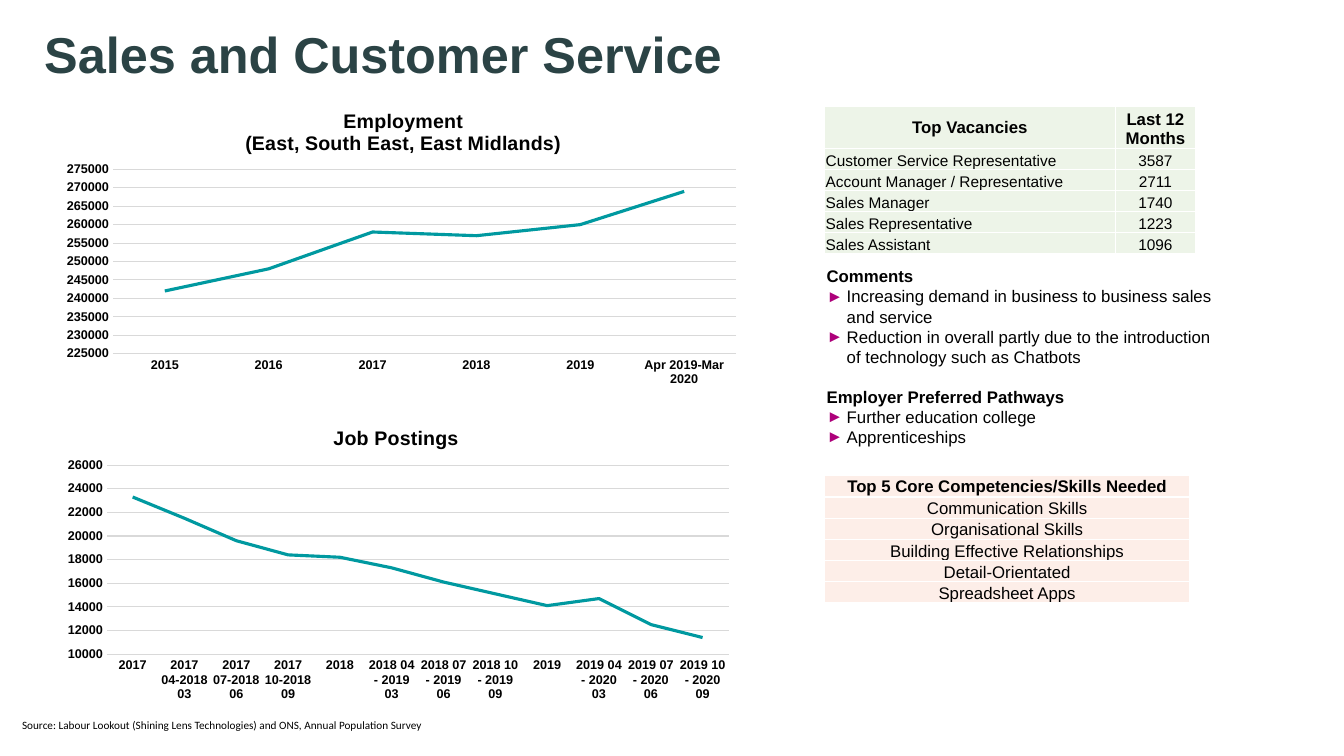
from lxml.etree import SubElement
from pptx import Presentation
from pptx.chart.data import CategoryChartData
from pptx.dml.color import RGBColor
from pptx.enum.chart import XL_CHART_TYPE, XL_TICK_MARK
from pptx.enum.text import MSO_ANCHOR, PP_ALIGN
from pptx.oxml import parse_xml
from pptx.oxml.ns import nsdecls, qn
from pptx.util import Inches, Pt

COLORS = {
    "heading": "2B4345",
    "text": "000000",
    "trend": "0099A0",
    "grid": "D9D9D9",
    "bullet": "AD007A",
    "vacancies": "EDF4E8",
    "skills": "FDEEE8",
    "border": "FFFFFF",
}


def style(font, size, bold=False, color="text", name="Arial"):
    for attribute, value in {"name": name, "size": Pt(size), "bold": bold}.items():
        setattr(font, attribute, value)
    font.color.rgb = RGBColor.from_string(COLORS[color])


def place(parent, position, x, y, width=None, height=None):
    """Insert a manual chart layout, given as fractions of the chart area."""
    extent = ""
    if width:
        extent = f'<c:w val="{width}"/><c:h val="{height}"/>'
    target = '<c:layoutTarget val="inner"/>' if width else ""
    for existing in parent.findall(qn("c:layout")):
        parent.remove(existing)
    parent.insert(position, parse_xml(
        f'<c:layout {nsdecls("c")}><c:manualLayout>{target}'
        '<c:xMode val="edge"/><c:yMode val="edge"/>'
        f'<c:x val="{x}"/><c:y val="{y}"/>{extent}</c:manualLayout></c:layout>'))


prs = Presentation()
prs.slide_width, prs.slide_height = Inches(13.33), Inches(7.5)
slide = prs.slides.add_slide(prs.slide_layouts[6])

# Heading and source line
labels = [
    ("Sales and Customer Service", (0.34, 0, 12.66, 1.05), MSO_ANCHOR.MIDDLE,
     {"size": 36, "bold": True, "color": "heading"}),
    ("Source: Labour Lookout (Shining Lens Technologies) and ONS, Annual Population Survey",
     (0.12, 7.08, 5.45, 0.37), MSO_ANCHOR.TOP, {"size": 8, "name": "Calibri"}),
]
for wording, box, anchor, font_values in labels:
    frame = slide.shapes.add_textbox(*map(Inches, box)).text_frame
    frame.word_wrap = True
    frame.vertical_anchor = anchor
    frame.text = wording
    style(frame.paragraphs[0].runs[0].font, **font_values)

# Trend charts
trends = [
    {
        "title": "Employment\n(East, South East, East Midlands)",
        "box": (0.54, 0.9, 6.9, 3),
        "title_at": (0.27, 0.05),
        "plot": (0.084, 0.26, 0.896, 0.61),
        "scale": (225000, 275000, 5000),
        "points": {"2015": 242000, "2016": 248000, "2017": 258000, "2018": 257000,
                   "2019": 260000, "Apr 2019-Mar 2020": 269000},
    },
    {
        "title": "Job Postings",
        "box": (0.54, 4.03, 6.83, 3),
        "title_at": (0.4, 0.05),
        "plot": (0.076, 0.195, 0.903, 0.625),
        "scale": (10000, 26000, 2000),
        "points": {"2017": 23300, "2017 04-2018 03": 21500, "2017 07-2018 06": 19600,
                   "2017 10-2018 09": 18400, "2018": 18200, "2018 04 - 2019 03": 17300,
                   "2018 07 - 2019 06": 16100, "2018 10 - 2019 09": 15100, "2019": 14100,
                   "2019 04 - 2020 03": 14700, "2019 07 - 2020 06": 12500,
                   "2019 10 - 2020 09": 11400},
    },
]
for trend in trends:
    data = CategoryChartData(number_format="General")
    data.categories = list(trend["points"])
    data.add_series("Series 1", list(trend["points"].values()))
    chart = slide.shapes.add_chart(
        XL_CHART_TYPE.LINE, *map(Inches, trend["box"]), data).chart
    style(chart.font, 10, bold=True)
    chart.has_legend = False

    heading = chart.chart_title
    heading.text_frame.text = trend["title"]
    for paragraph in heading.text_frame.paragraphs:
        style(paragraph.runs[0].font, 14, bold=True)
    heading.include_in_layout = False
    place(heading._element, 1, *trend["title_at"])
    place(chart._chartSpace.chart.plotArea, 0, *trend["plot"])

    for axis in (chart.category_axis, chart.value_axis):
        axis.major_tick_mark = axis.minor_tick_mark = XL_TICK_MARK.NONE
        style(axis.tick_labels.font, 9, bold=True)
    values = chart.value_axis
    values.minimum_scale, values.maximum_scale, values.major_unit = trend["scale"]
    values.format.line.fill.background()
    for line in (chart.category_axis.format.line, values.major_gridlines.format.line):
        line.color.rgb = RGBColor.from_string(COLORS["grid"])
        line.width = Pt(0.75)

    plot = chart.plots[0]
    plot.vary_by_categories = False
    series = plot.series[0]
    series.smooth = False
    series.format.line.color.rgb = RGBColor.from_string(COLORS["trend"])
    series.format.line.width = Pt(2.25)

# Vacancy and skill tables
tables = [
    {
        "at": (8.18, 1.06), "columns": (2.88, 0.8), "header_height": 0.4,
        "fill": "vacancies", "size": 11, "alignments": (PP_ALIGN.LEFT, PP_ALIGN.CENTER),
        "rows": [("Top Vacancies", "Last 12 Months"),
                 ("Customer Service Representative", "3587"),
                 ("Account Manager / Representative", "2711"),
                 ("Sales Manager", "1740"),
                 ("Sales Representative", "1223"),
                 ("Sales Assistant", "1096")],
    },
    {
        "at": (8.18, 4.72), "columns": (3.62,), "header_height": 0.21,
        "fill": "skills", "size": 12, "alignments": (PP_ALIGN.CENTER,),
        "rows": [("Top 5 Core Competencies/Skills Needed",),
                 ("Communication Skills",),
                 ("Organisational Skills",),
                 ("Building Effective Relationships",),
                 ("Detail-Orientated",),
                 ("Spreadsheet Apps",)],
    },
]
ROW_HEIGHT = 0.21
for content in tables:
    rows, columns = content["rows"], content["columns"]
    height = content["header_height"] + ROW_HEIGHT * (len(rows) - 1)
    table = slide.shapes.add_table(
        len(rows), len(columns), *map(Inches, (*content["at"], sum(columns), height))).table
    for column, width in zip(table.columns, columns):
        column.width = Inches(width)
    for r, row in enumerate(rows):
        is_header = r == 0
        table.rows[r].height = Inches(content["header_height"] if is_header else ROW_HEIGHT)
        for c, wording in enumerate(row):
            cell = table.cell(r, c)
            cell.text = wording
            cell.margin_left = cell.margin_right = cell.margin_top = Inches(0.01)
            cell.margin_bottom = 0
            cell.vertical_anchor = (
                MSO_ANCHOR.MIDDLE if is_header and c == 0 else MSO_ANCHOR.BOTTOM)
            paragraph = cell.text_frame.paragraphs[0]
            paragraph.alignment = PP_ALIGN.CENTER if is_header else content["alignments"][c]
            style(paragraph.runs[0].font, 12 if is_header else content["size"], bold=is_header)
            properties = cell._tc.get_or_add_tcPr()
            for side in ("lnL", "lnR", "lnT", "lnB"):
                border = SubElement(properties, qn(f"a:{side}"), w=str(Pt(1)))
                solid = SubElement(border, qn("a:solidFill"))
                SubElement(solid, qn("a:srgbClr"), val=COLORS["border"])
            cell.fill.solid()
            cell.fill.fore_color.rgb = RGBColor.from_string(COLORS[content["fill"]])

# Comments and pathways
sections = {
    "Comments": [
        "Increasing demand in business to business sales and service",
        "Reduction in overall partly due to the introduction of technology such as Chatbots",
    ],
    "Employer Preferred Pathways": ["Further education college", "Apprenticeships"],
}
remarks = slide.shapes.add_textbox(*map(Inches, (8.1, 2.59, 4.03, 2.32))).text_frame
remarks.word_wrap = True
for section, points in sections.items():
    is_first = section == "Comments"
    subheading = remarks.paragraphs[0] if is_first else remarks.add_paragraph()
    if not is_first:
        subheading.space_before = Pt(14)
    subheading.text = section
    style(subheading.runs[0].font, 12, bold=True)
    for point in points:
        paragraph = remarks.add_paragraph()
        properties = paragraph._p.get_or_add_pPr()
        properties.set("marL", str(Inches(0.2)))
        properties.set("indent", str(-Inches(0.2)))
        bullet_color = SubElement(properties, qn("a:buClr"))
        SubElement(bullet_color, qn("a:srgbClr"), val=COLORS["bullet"])
        SubElement(properties, qn("a:buFont"), typeface="Arial")
        SubElement(properties, qn("a:buChar"), char="►")
        paragraph.text = point
        style(paragraph.runs[0].font, 12)

prs.save("out.pptx")
